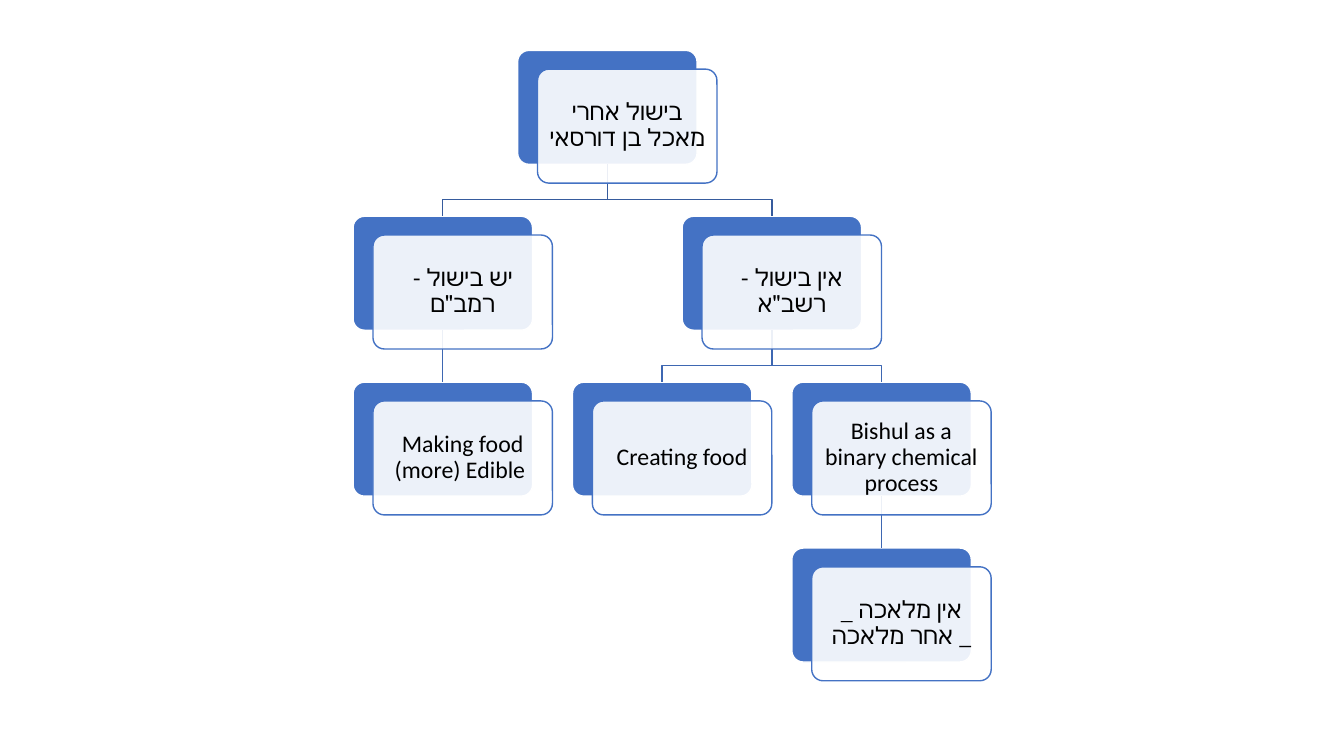
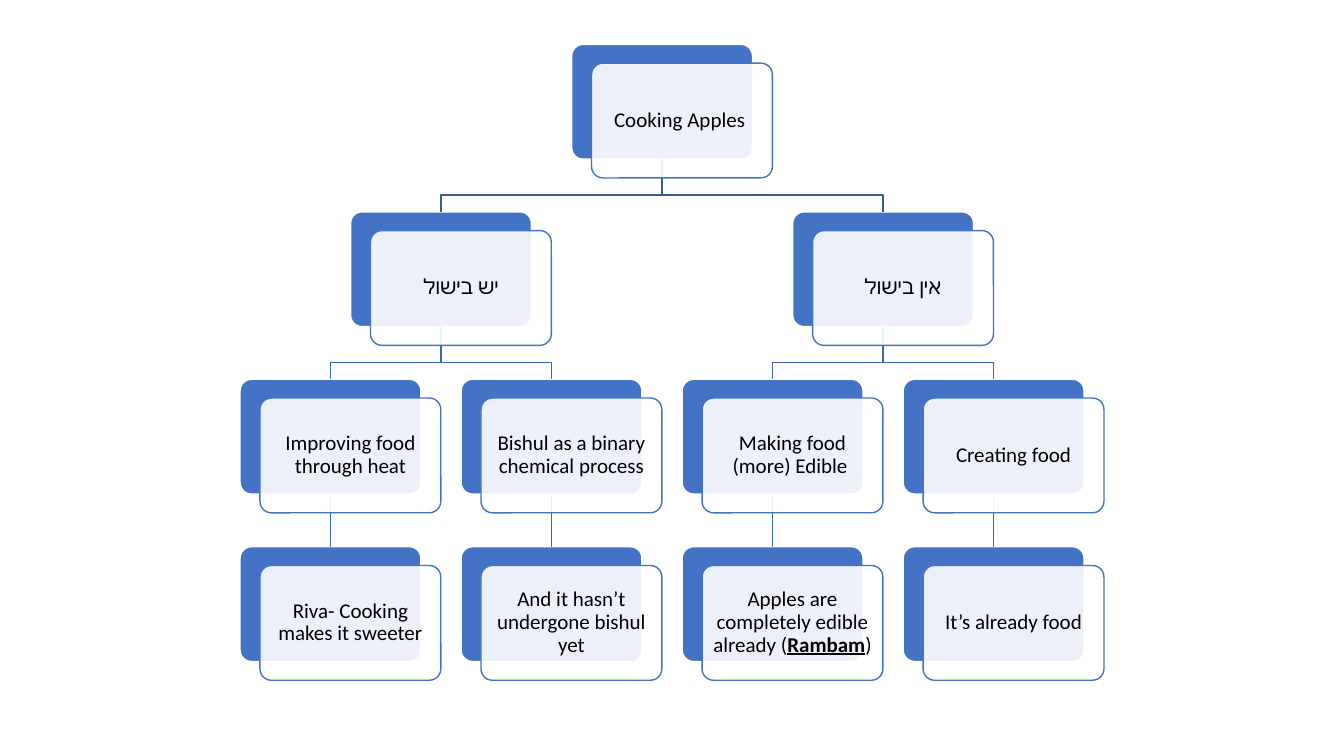
"""Build two slides of tree charts with paired cards and bent links."""
from dataclasses import dataclass, field
from itertools import count
from typing import Any

from lxml.etree import SubElement as add_sub
from pptx import Presentation
from pptx.dml.color import RGBColor as Rgb
from pptx.enum.shapes import MSO_CONNECTOR as Link, MSO_SHAPE as Shape
from pptx.enum.text import MSO_ANCHOR as Anchor, PP_ALIGN as Align
from pptx.oxml.ns import qn
from pptx.util import Pt


@dataclass(frozen=True)
class Theme:
    blue: Rgb = Rgb(0x44, 0x72, 0xC4)
    white: Rgb = Rgb(0xFF, 0xFF, 0xFF)
    black: Rgb = Rgb(0, 0, 0)
    trunk: Rgb = Rgb(0x36, 0x5B, 0x9D)
    branch: Rgb = Rgb(0x3E, 0x67, 0xB2)
    font: str = "Calibri"
    large: int = 17
    small: int = 15
    line: int = 1
    round: float = 0.1
    alpha: int = 90


@dataclass
class Node:
    runs: tuple
    kids: tuple = ()
    x: float = 0
    y: float = 0
    back: Any = field(default=None, repr=False)


@dataclass(frozen=True)
class Grid:
    left: float
    top: float
    wide: float
    high: float
    col: float
    row: float
    size: int
    dx: float = 14.2
    dy: float = 13.4
    bend: float = 0.68


THEME = Theme()


def node(text, *kids):
    return Node((text,) if isinstance(text, str) else text, kids)


def place(item, grid, slots, depth=0):
    for kid in item.kids:
        place(kid, grid, slots, depth + 1)
    if item.kids:
        item.x = (item.kids[0].x + item.kids[-1].x) / 2
    else:
        item.x = grid.left + next(slots) * grid.col
    item.y = grid.top + depth * grid.row


def walk(item):
    yield item
    for kid in item.kids:
        yield from walk(kid)


def add_card(slide, grid, x, y, fill, edge):
    card = slide.shapes.add_shape(
        Shape.ROUNDED_RECTANGLE, Pt(x), Pt(y), Pt(grid.wide), Pt(grid.high))
    card.adjustments[0] = THEME.round
    card.shadow.inherit = False
    card.fill.solid()
    card.fill.fore_color.rgb = fill
    card.line.color.rgb = edge
    card.line.width = Pt(THEME.line)
    return card


def add_front(slide, grid, item):
    card = add_card(slide, grid, item.x + grid.dx, item.y + grid.dy,
                    THEME.white, THEME.blue)
    tint = card.fill._xPr.find(qn("a:solidFill"))[0]
    add_sub(tint, qn("a:alpha"), val=str(THEME.alpha * 1000))
    frame = card.text_frame
    frame.word_wrap = True
    frame.vertical_anchor = Anchor.MIDDLE
    pad = Pt(0.3 * grid.size)
    frame.margin_left = frame.margin_right = pad
    frame.margin_top = frame.margin_bottom = pad
    para = frame.paragraphs[0]
    para.alignment = Align.CENTER
    para.line_spacing = 0.9
    for i, text in enumerate(item.runs):
        run = para.add_run()
        run.text = text
        font = run.font
        font.name, font.size = THEME.font, Pt(grid.size)
        font.color.rgb = THEME.black
        if i % 2:
            font.bold = font.underline = True


def add_link(slide, grid, item, kid, color):
    x, end = (Pt(n.x + grid.wide / 2) for n in (item, kid))
    top, low = Pt(item.y + grid.high), Pt(kid.y)
    if x == end:
        link = slide.shapes.add_connector(Link.STRAIGHT, x, top, end, low)
        link.begin_connect(item.back, 2)
        link.end_connect(kid.back, 0)
        add_sub(link._element.spPr, qn("a:effectLst"))
    else:
        mid = round(top + (low - top) * grid.bend)
        pen = slide.shapes.build_freeform(x, top)
        pen.add_line_segments([(x, mid), (end, mid), (end, low)], close=False)
        link = pen.convert_to_shape()
        link.fill.background()
        link.shadow.inherit = False
    link.line.color.rgb = color
    link.line.width = Pt(THEME.line)


def add_tree(deck, grid, root):
    slide = deck.slides.add_slide(deck.slide_layouts[6])
    place(root, grid, count())
    items = list(walk(root))
    for item in items:
        item.back = add_card(slide, grid, item.x, item.y, THEME.blue, THEME.white)
    for item in items:
        color = THEME.trunk if item is root else THEME.branch
        for kid in item.kids:
            add_link(slide, grid, item, kid, color)
    for item in items:
        add_front(slide, grid, item)


def main():
    deck = Presentation()
    deck.slide_width, deck.slide_height = Pt(960), Pt(540)
    add_tree(
        deck, Grid(252.2, 36, 128.2, 81.4, 156.7, 118.5, THEME.large),
        node("בישול אחרי מאכל בן דורסאי",
             node("יש בישול - רמב\"ם",
                  node("Making food (more) Edible ")),
             node("אין בישול - רשב\"א",
                  node("Creating food"),
                  node("Bishul as a binary chemical process",
                       node("אין מלאכה _ אחר מלאכה _")))))
    add_tree(
        deck, Grid(171.5, 31.7, 129.2, 82, 157.9, 119.6, THEME.small),
        node("Cooking Apples ",
             node("יש בישול",
                  node("Improving food through heat",
                       node("Riva- Cooking makes it sweeter")),
                  node("Bishul as a binary chemical process",
                       node("And it hasn’t undergone bishul yet"))),
             node("אין בישול",
                  node("Making food (more) Edible ",
                       node(("Apples are completely edible already (",
                             "Rambam", ")"))),
                  node("Creating food",
                       node("It’s already food")))))
    deck.save("out.pptx")


if __name__ == "__main__":
    main()
